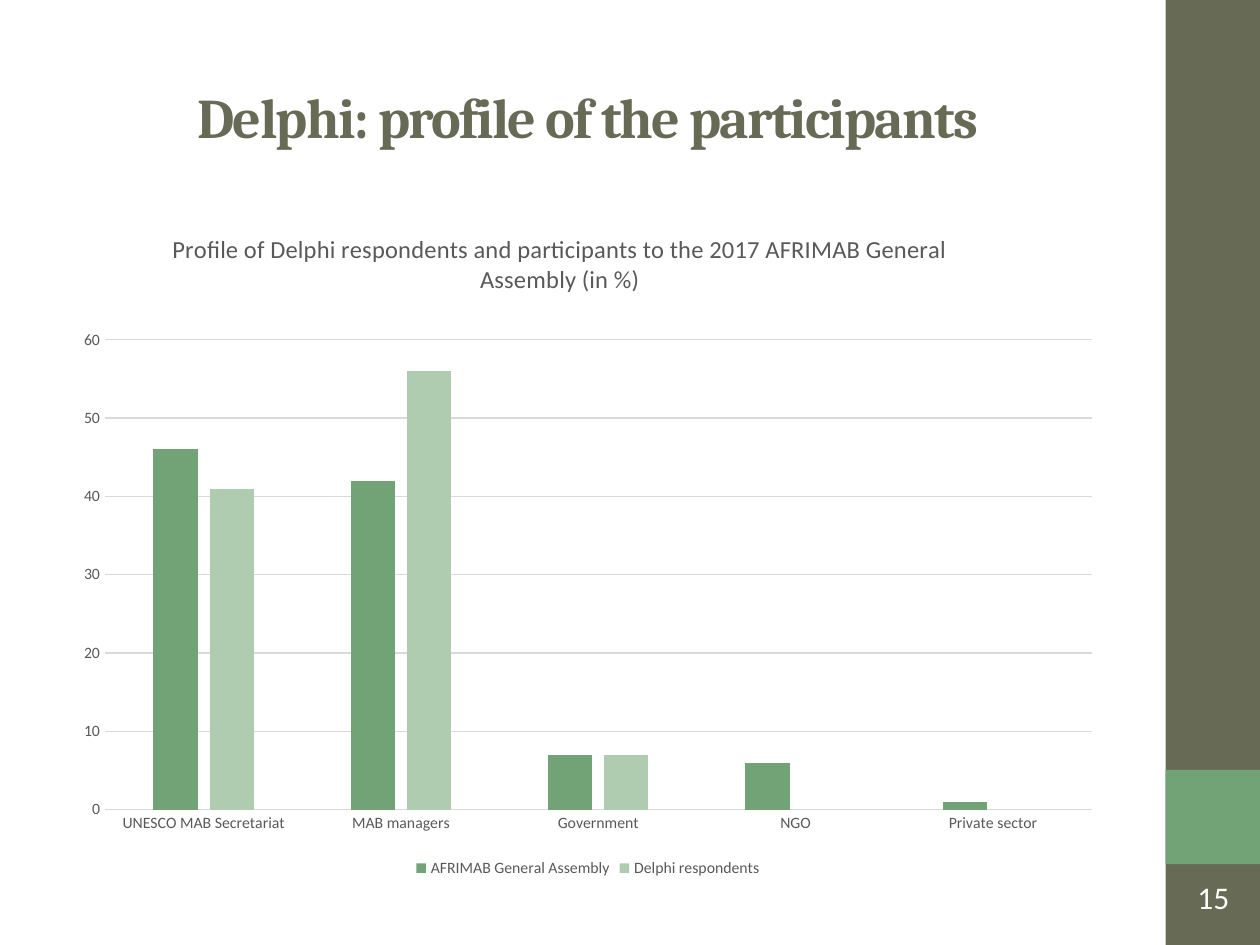
from dataclasses import dataclass

from lxml import etree
from pptx import Presentation
from pptx import util as u
from pptx.chart import data
from pptx.dml.color import RGBColor
from pptx.enum import chart as ch, shapes, text
from pptx.oxml import parse_xml
from pptx.oxml.ns import nsdecls


@dataclass(frozen=True)
class Theme:
    olive: str = "676A55"
    green: str = "72A376"
    pale_green: str = "B0CCB0"
    grey: str = "595959"
    grid: str = "D9D9D9"
    white: str = "FFFFFF"
    heading_font: str = "Cambria"
    body_font: str = "Calibri"
    title_size: float = 32
    number_size: float = 18
    chart_title_size: float = 14
    label_size: float = 9


def rgb(value):
    return RGBColor.from_string(value)


def set_layout(parent, before, inner=False, **position):
    """Place a chart part by fractions of the chart, ahead of the tag `before`."""
    target = '<c:layoutTarget val="inner"/>' if inner else ""
    modes = "".join(f'<c:{k}Mode val="edge"/>' for k in "xy")
    values = "".join(f'<c:{k} val="{v}"/>' for k, v in position.items())
    layout = parse_xml(f'<c:layout {nsdecls("c")}><c:manualLayout>{target}{modes}'
                       f'{values}</c:manualLayout></c:layout>')
    for old in parent.findall(layout.tag):
        parent.remove(old)
    namespace = etree.QName(layout).namespace
    parent.find(f"{{{namespace}}}{before}").addprevious(layout)


class SlideBuilder:
    def __init__(self, slide, theme):
        self.s = slide
        self.theme = theme

    def style(self, font, size, color, name=None, bold=False):
        font.name = name or self.theme.body_font
        font.size = u.Pt(size)
        font.bold = bold
        font.color.rgb = rgb(color)

    def title(self, words, *box):
        sp = self.s.shapes.title
        sp.left, sp.top, sp.width, sp.height = map(u.Cm, box)
        tf = sp.text_frame
        tf.vertical_anchor = text.MSO_ANCHOR.MIDDLE
        p = tf.paragraphs[0]
        r = p.add_run()
        r.text = words
        r._r.get_or_add_rPr().set("spc", "-100")
        p.alignment = text.PP_ALIGN.CENTER
        self.style(p.font, self.theme.title_size, self.theme.olive,
                   self.theme.heading_font, True)

    def shape(self, kind, *box, fill=None):
        sp = self.s.shapes.add_shape(kind, *map(u.Cm, box))
        sp.shadow.inherit = False
        sp.line.fill.background()
        if fill:
            sp.fill.solid()
            sp.fill.fore_color.rgb = rgb(fill)
        else:
            sp.fill.background()
        return sp

    def slide_number(self, number, *box):
        sp = self.shape(shapes.MSO_SHAPE.DOUBLE_BRACKET, *box)
        sp.adjustments[0] = 0.18
        tf = sp.text_frame
        tf.margin_left = tf.margin_right = tf.margin_top = tf.margin_bottom = 0
        tf.vertical_anchor = text.MSO_ANCHOR.MIDDLE
        p = tf.paragraphs[0]
        p.text = number
        p.alignment = text.PP_ALIGN.CENTER
        self.style(p.font, self.theme.number_size, self.theme.white)

    def column_chart(self, heading, categories, series, *box):
        t = self.theme
        chart_data = data.CategoryChartData()
        chart_data.categories = categories
        for name, values, _ in series:
            chart_data.add_series(name, values)
        chart = self.s.shapes.add_chart(ch.XL_CHART_TYPE.COLUMN_CLUSTERED,
                                        *map(u.Cm, box), chart_data).chart
        self.style(chart.font, t.label_size, t.grey)

        tf = chart.chart_title.text_frame
        tf.text = heading
        self.style(tf.paragraphs[0].font, t.chart_title_size, t.grey)
        set_layout(chart.chart_title._element, "overlay", x=0.1, y=0.01)

        plot = chart.plots[0]
        plot.gap_width, plot.overlap = 219, -27
        plot.vary_by_categories = False
        for ser, (_, _, color) in zip(plot.series, series):
            ser.format.fill.solid()
            ser.format.fill.fore_color.rgb = rgb(color)
            ser.invert_if_negative = False
        set_layout(plot._element.getparent(), "barChart", inner=True,
                   x=0.04, y=0.18, w=0.94, h=0.71)

        value_axis, category_axis = chart.value_axis, chart.category_axis
        for axis in (value_axis, category_axis):
            axis.major_tick_mark = axis.minor_tick_mark = ch.XL_TICK_MARK.NONE
            self.style(axis.tick_labels.font, t.label_size, t.grey)
        value_axis.minimum_scale, value_axis.maximum_scale = 0, 60
        value_axis.major_unit = 10
        value_axis.format.line.fill.background()
        for line in (category_axis.format.line, value_axis.major_gridlines.format.line):
            line.color.rgb = rgb(t.grid)
            line.width = u.Pt(0.75)

        chart.has_legend = True
        chart.legend.position = ch.XL_LEGEND_POSITION.BOTTOM
        chart.legend.include_in_layout = False
        self.style(chart.legend.font, t.label_size, t.grey)


def main():
    prs = Presentation()
    prs.slide_width, prs.slide_height = u.Cm(25.4), u.Cm(19.05)
    theme = Theme()
    title_only = prs.slide_layouts[5]
    b = SlideBuilder(prs.slides.add_slide(title_only), theme)

    rect = shapes.MSO_SHAPE.RECTANGLE
    b.shape(rect, 23.5, 0, 1.9, 19.05, fill=theme.olive)
    b.shape(rect, 23.5, 15.52, 1.9, 1.9, fill=theme.green)
    b.title("Delphi: profile of the participants", 1.27, 0.76, 21.16, 3.18)
    b.slide_number("15", 23.7, 17.53, 1.52, 1.09)
    b.column_chart(
        "Profile of Delphi respondents and participants to the 2017 "
        "AFRIMAB General Assembly (in %)",
        ["UNESCO MAB Secretariat", "MAB managers", "Government", "NGO", "Private sector"],
        [("AFRIMAB General Assembly", (46, 42, 7, 6, 1), theme.green),
         ("Delphi respondents", (41, 56, 7, None, None), theme.pale_green)],
        1.27, 4.45, 21.16, 13.34)
    prs.save("out.pptx")


if __name__ == "__main__":
    main()
